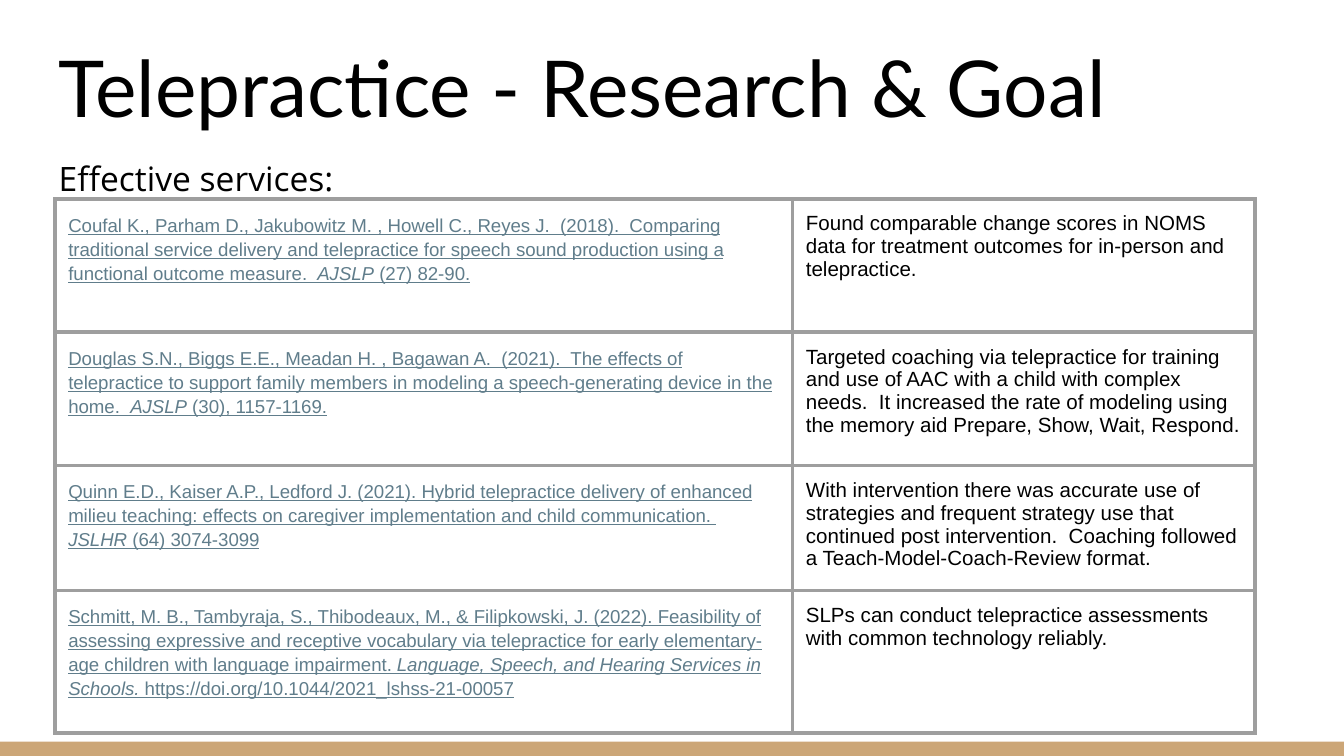
from lxml import etree
from pptx import Presentation
from pptx.dml.color import RGBColor
from pptx.enum.shapes import MSO_SHAPE
from pptx.enum.text import MSO_ANCHOR
from pptx.oxml.ns import qn
from pptx.util import Cm, Pt

RECTANGLE = MSO_SHAPE.RECTANGLE
TOP, BOTTOM = MSO_ANCHOR.TOP, MSO_ANCHOR.BOTTOM

# Each study: citation before the journal, journal, rest of citation, finding
STUDIES = [
    ("Coufal K., Parham D., Jakubowitz M. , Howell C., Reyes J.  (2018).  "
     "Comparing traditional service delivery and telepractice for speech sound "
     "production using a functional outcome measure.  ",
     "AJSLP", " (27) 82-90.",
     "Found comparable change scores in NOMS data for treatment outcomes for "
     "in-person and telepractice."),
    ("Douglas S.N., Biggs E.E., Meadan H. , Bagawan A.  (2021).  The effects of "
     "telepractice to support family members in modeling a speech-generating "
     "device in the home.  ",
     "AJSLP", " (30), 1157-1169.",
     "Targeted coaching via telepractice for training and use of AAC with a child "
     "with complex needs.  It increased the rate of modeling using the memory aid "
     "Prepare, Show, Wait, Respond."),
    ("Quinn E.D., Kaiser A.P., Ledford J. (2021). Hybrid telepractice delivery of "
     "enhanced milieu teaching: effects on caregiver implementation and child "
     "communication.  ",
     "JSLHR ", "(64) 3074-3099",
     "With intervention there was accurate use of strategies and frequent strategy "
     "use that continued post intervention.  Coaching followed a "
     "Teach-Model-Coach-Review format."),
    ("Schmitt, M. B., Tambyraja, S., Thibodeaux, M., & Filipkowski, J. (2022). "
     "Feasibility of assessing expressive and receptive vocabulary via "
     "telepractice for early elementary-age children with language impairment. ",
     "Language, Speech, and Hearing Services in Schools. ",
     "https://doi.org/10.1044/2021_lshss-21-00057",
     "SLPs can conduct telepractice assessments with common technology reliably."),
]


def colour(value):
    return RGBColor.from_string(value)


class StudySlide:
    INK, LINK, BORDER, ACCENT = "000000", "607D8B", "9E9E9E", "CCA677"
    BORDER_WIDTH = Pt(2.25)
    INSET = Cm(0.25)
    LINE_SPACING = 1.15

    def __init__(self, slide):
        self.slide = slide

    def set_insets(self, holder):
        holder.margin_left = holder.margin_right = self.INSET
        holder.margin_top = holder.margin_bottom = self.INSET

    def add_run(self, paragraph, text, font_name, size, ink=INK,
                italic=False, underline=False):
        run = paragraph.add_run()
        run.text = text
        font = run.font
        font.name, font.size = font_name, Pt(size)
        font.italic, font.underline = italic, underline
        font.color.rgb = colour(ink)

    def add_bar(self, left, top, width, height):
        bar = self.slide.shapes.add_shape(
            RECTANGLE, Cm(left), Cm(top), Cm(width), Cm(height))
        bar.shadow.inherit = False
        bar.fill.solid()
        bar.fill.fore_color.rgb = colour(self.ACCENT)
        bar.line.fill.background()

    def add_text(self, text, left, top, width, height, font_name, size,
                 anchor=TOP, line_spacing=None):
        frame = self.slide.shapes.add_textbox(
            Cm(left), Cm(top), Cm(width), Cm(height)).text_frame
        frame.word_wrap = True
        frame.vertical_anchor = anchor
        self.set_insets(frame)
        paragraph = frame.paragraphs[0]
        paragraph.line_spacing = line_spacing
        self.add_run(paragraph, text, font_name, size)

    def format_cell(self, cell):
        """Clear the fill, set the insets and draw all four borders."""
        self.set_insets(cell)
        cell.fill.background()
        properties = cell._tc.get_or_add_tcPr()
        for position, side in enumerate(("a:lnL", "a:lnR", "a:lnT", "a:lnB")):
            border = etree.Element(qn(side), w=str(self.BORDER_WIDTH))
            fill = etree.SubElement(border, qn("a:solidFill"))
            etree.SubElement(fill, qn("a:srgbClr"), val=self.BORDER)
            properties.insert(position, border)

    def add_study_table(self, studies, left, top, column_widths, row_heights):
        table = self.slide.shapes.add_table(
            len(studies), len(column_widths), Cm(left), Cm(top),
            Cm(sum(column_widths)), Cm(sum(row_heights))).table
        table.first_row = table.horz_banding = False
        for column, width in zip(table.columns, column_widths):
            column.width = Cm(width)
        for row, height, study in zip(table.rows, row_heights, studies):
            row.height = Cm(height)
            for cell in row.cells:
                self.format_cell(cell)
            *citation_parts, finding = study
            citation, result = (cell.text_frame.paragraphs[0] for cell in row.cells)
            citation.line_spacing = self.LINE_SPACING
            for part, italic in zip(citation_parts, (False, True, False)):
                self.add_run(citation, part, "Arial", 10, self.LINK, italic, True)
            self.add_run(result, finding, "Arial", 11)


def main():
    presentation = Presentation()
    presentation.slide_width, presentation.slide_height = Cm(25.4), Cm(14.29)
    page = StudySlide(presentation.slides.add_slide(presentation.slide_layouts[6]))
    page.add_bar(0, 14.02, 25.4, 0.27)
    page.add_text("Telepractice - Research & Goal", 0.86, 0.46, 23.67, 2.31,
                  "Lato", 42, anchor=BOTTOM)
    page.add_text("Effective services:", 0.86, 2.62, 23.67, 10.11,
                  "Open Sans", 18, line_spacing=page.LINE_SPACING)
    page.add_study_table(STUDIES, 1.04, 3.76, (13.94, 8.74),
                         (2.52, 2.52, 2.25, 2.69))
    presentation.save("out.pptx")


if __name__ == "__main__":
    main()
